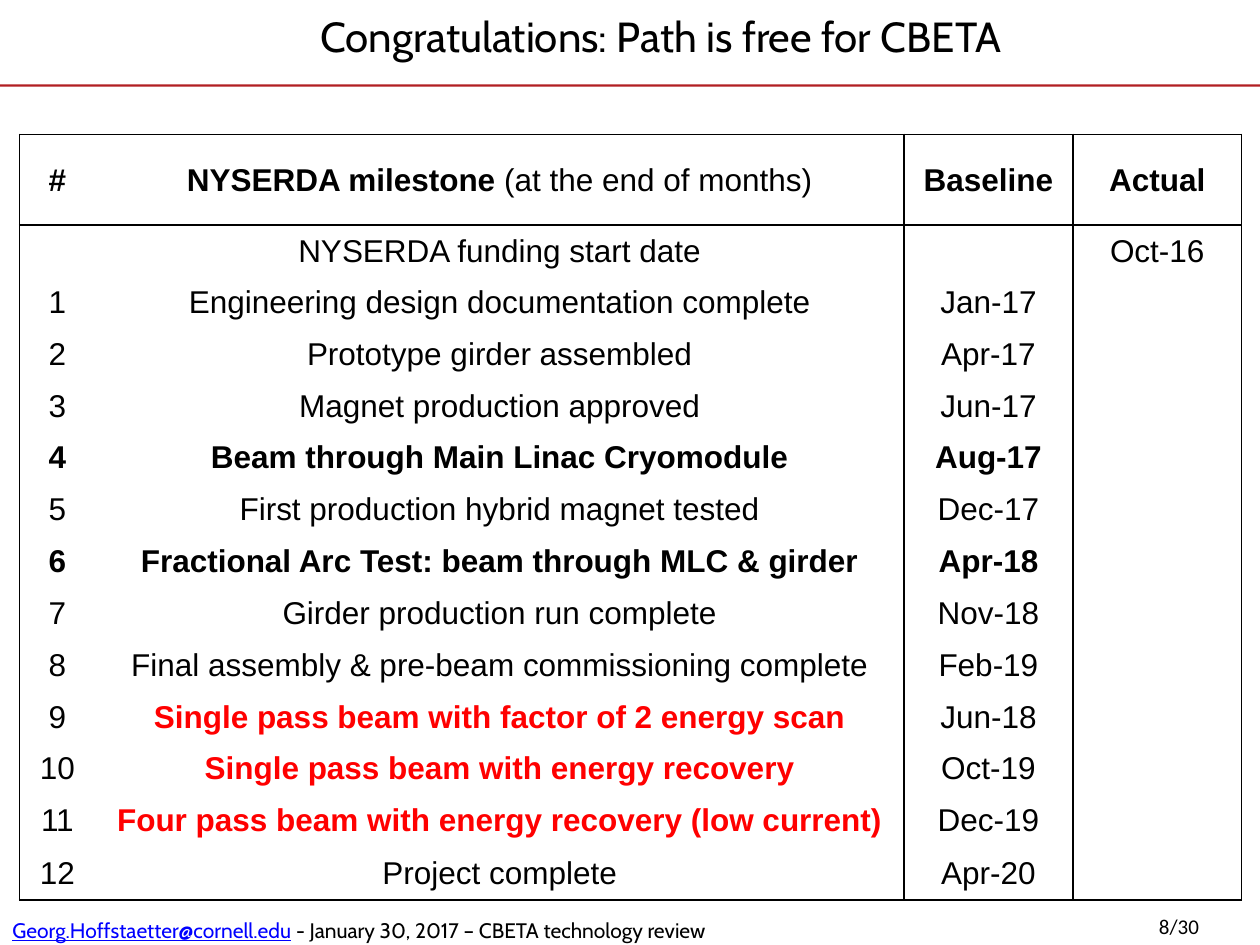
import pptx
import pptx.dml.color
import pptx.enum.shapes
import pptx.enum.text
import pptx.oxml
import pptx.oxml.ns
import pptx.util

Pt = pptx.util.Pt
PP_ALIGN = pptx.enum.text.PP_ALIGN
ANCHOR = pptx.enum.text.MSO_ANCHOR

BLACK, RED, BLUE, RULE, WHITE = "000000", "FF0000", "0000FF", "B21F22", "FFFFFF"

TITLE = "Congratulations: Path is free for CBETA"
EMAIL = "Georg.Hoffstaetter@cornell.edu"
EVENT = " - January 30, 2017 – CBETA technology review"
PAGE = "8/30"

# Each cell is a list of runs: (text, bold, colour)
HEADER = [
    [("#", True, BLACK)],
    [("NYSERDA milestone ", True, BLACK), ("(at the end of months)", False, BLACK)],
    [("Baseline", True, BLACK)],
    [("Actual", True, BLACK)],
]
MILESTONES = [
    ("", "NYSERDA funding start date", "", "Oct-16"),
    ("1", "Engineering design documentation complete", "Jan-17", ""),
    ("2", "Prototype girder assembled", "Apr-17", ""),
    ("3", "Magnet production approved", "Jun-17", ""),
    ("4", "Beam through Main Linac Cryomodule", "Aug-17", ""),
    ("5", "First production hybrid magnet tested", "Dec-17", ""),
    ("6", "Fractional Arc Test: beam through MLC & girder", "Apr-18", ""),
    ("7", "Girder production run complete", "Nov-18", ""),
    ("8", "Final assembly & pre-beam commissioning complete", "Feb-19", ""),
    ("9", "Single pass beam with factor of 2 energy scan", "Jun-18", ""),
    ("10", "Single pass beam with energy recovery", "Oct-19", ""),
    ("11", "Four pass beam with energy recovery (low current)", "Dec-19", ""),
    ("12", "Project complete", "Apr-20", ""),
]
BOLD_ROWS = {"4", "6"}
RED_ROWS = {"9", "10", "11"}

COL_WIDTHS = [43.2, 462.2, 96.5, 96.5]
ROW_HEIGHTS = [51.8, 29.1] + [29.65] * 11 + [30.8]


def rgb(hex_color):
    return pptx.dml.color.RGBColor.from_string(hex_color)


def add_run(p, text, font, size, color=BLACK, bold=False, underline=False):
    r = p.add_run()
    r.text = text
    f = r.font
    f.name, f.size, f.bold, f.underline = font, Pt(size), bold, underline
    f.color.rgb = rgb(color)


def add_text_box(s, left, top, width, height, margins=(7.2, 3.6)):
    """Add a one-line text box and return its text frame."""
    tf = s.shapes.add_textbox(Pt(left), Pt(top), Pt(width), Pt(height)).text_frame
    tf.word_wrap = False
    tf.margin_left = tf.margin_right = Pt(margins[0])
    tf.margin_top = tf.margin_bottom = Pt(margins[1])
    return tf


def set_borders(cell, sides):
    """Draw a 1 pt black line on the given sides and none on the others."""
    tc_pr = cell._tc.get_or_add_tcPr()
    for i, side in enumerate("LRTB"):
        paint = (f'<a:solidFill><a:srgbClr val="{BLACK}"/></a:solidFill>'
                 if side in sides else "<a:noFill/>")
        line = pptx.oxml.parse_xml(
            f'<a:ln{side} {pptx.oxml.ns.nsdecls("a")} w="{Pt(1)}">{paint}</a:ln{side}>')
        tc_pr.insert(i, line)


def border_sides(row, col, last_row):
    """Box the header and body; '#' and milestone columns share one box."""
    sides = "R" if col == 1 else "L" if col == 0 else "LR"
    if row <= 1:
        sides += "T"
    if row in (0, last_row):
        sides += "B"
    return sides


def milestone_runs(milestone):
    number = milestone[0]
    cells = []
    for col, text in enumerate(milestone):
        is_red = number in RED_ROWS and col == 1
        bold = is_red or number in BOLD_ROWS
        cells.append([(text, bold, RED if is_red else BLACK)] if text else [])
    return cells


def add_milestone_table(s):
    rows = [HEADER] + [milestone_runs(m) for m in MILESTONES]
    table = s.shapes.add_table(
        len(rows), len(COL_WIDTHS), Pt(11.2), Pt(76.8),
        Pt(sum(COL_WIDTHS)), Pt(sum(ROW_HEIGHTS))).table
    table.first_row = table.horz_banding = False
    for column, width in zip(table.columns, COL_WIDTHS):
        column.width = Pt(width)
    for i, (height, row) in enumerate(zip(ROW_HEIGHTS, rows)):
        table.rows[i].height = Pt(height)
        for j, runs in enumerate(row):
            cell = table.cell(i, j)
            cell.fill.background()
            cell.vertical_anchor = ANCHOR.MIDDLE
            cell.margin_left = cell.margin_right = cell.margin_top = Pt(0.75)
            cell.margin_bottom = 0
            set_borders(cell, border_sides(i, j, len(rows) - 1))
            p = cell.text_frame.paragraphs[0]
            p.alignment = PP_ALIGN.CENTER
            p.font.size = Pt(18)
            for text, bold, color in runs:
                add_run(p, text, "Arial", 18, color, bold)


def main():
    prs = pptx.Presentation()
    prs.slide_width, prs.slide_height = Pt(720), Pt(540)
    s = prs.slides.add_slide(prs.slide_layouts[6])
    s.background.fill.solid()
    s.background.fill.fore_color.rgb = rgb(WHITE)

    page = add_text_box(s, 655.2, 518.4, 64.8, 21.6)
    add_run(page.paragraphs[0], PAGE, "Calibri", 12)

    footer = add_text_box(s, 0, 520.6, 430, 19.4)
    add_run(footer.paragraphs[0], EMAIL, "Cabin", 12, BLUE, underline=True)
    add_run(footer.paragraphs[0], EVENT, "Cabin", 12)

    rule = s.shapes.add_shape(pptx.enum.shapes.MSO_SHAPE.RECTANGLE,
                              0, Pt(48.2), Pt(720), Pt(1.4))
    rule.shadow.inherit = False
    rule.fill.solid()
    rule.fill.fore_color.rgb = rgb(RULE)
    rule.line.fill.background()

    title = add_text_box(s, 168.5, -2.9, 418.3, 46.8, margins=(0, 0))
    title.word_wrap = True
    title.vertical_anchor = ANCHOR.MIDDLE
    title.paragraphs[0].alignment = PP_ALIGN.CENTER
    add_run(title.paragraphs[0], TITLE, "Cabin", 24)

    add_milestone_table(s)
    prs.save("out.pptx")


if __name__ == "__main__":
    main()
